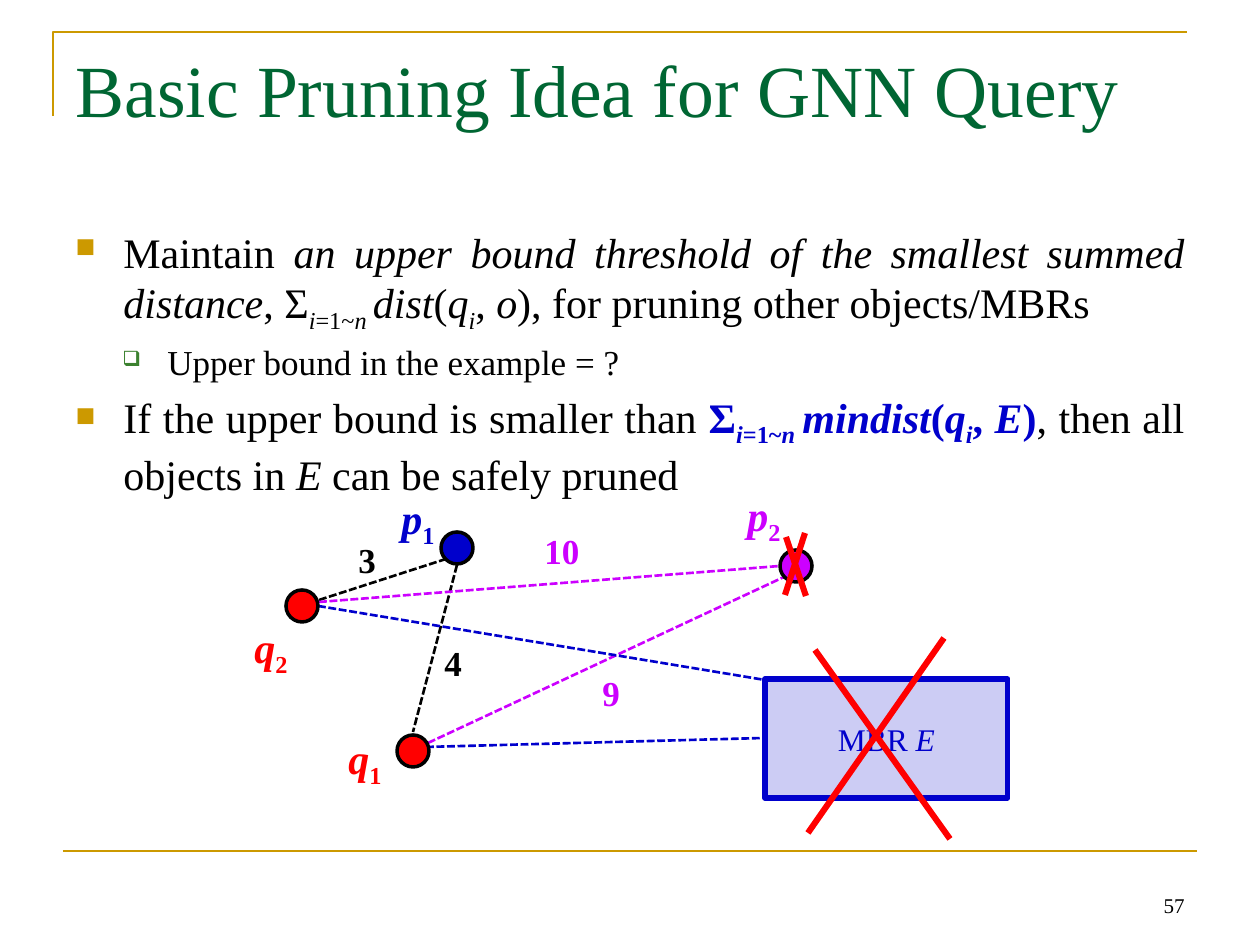
"""Build the slide on the basic pruning idea for GNN queries."""
from lxml import etree
from pptx import Presentation, util as u
from pptx.dml.color import RGBColor
from pptx.enum import dml, shapes, text
from pptx.oxml.ns import qn

PX = 914400 // 126
FONT = "Times New Roman"
BLACK = RGBColor(0x00, 0x00, 0x00)
BLUE = RGBColor(0x00, 0x00, 0xCC)
RED = RGBColor(0xFF, 0x00, 0x00)
VIOLET = RGBColor(0xCC, 0x00, 0xFF)
GOLD = RGBColor(0xCC, 0x99, 0x00)
GREEN = RGBColor(0x00, 0x66, 0x33)
LEAF = RGBColor(0x3B, 0x81, 0x2F)

TITLE = "Basic Pruning Idea for GNN Query"
# Style letters: i italic, s subscript, b bold blue
SUM = [("i", "is"), ("=1~", "s"), ("n ", "is")]
DIST_ARGS = [("(", ""), ("q", "i"), ("i", "is"), (", ", "")]
BOUND = [("Σ", "")] + SUM + [("mindist", "i")] + DIST_ARGS + [("E", "i"), (")", "")]
BODY = [
    (0, [("Maintain ", ""),
         ("an upper bound threshold of the smallest summed distance", "i"),
         (", Σ", "")] + SUM + [("dist", "i")] + DIST_ARGS
        + [("o", "i"), ("), for pruning other objects/MBRs", "")]),
    (1, [("Upper bound in the example = ?", "")]),
    (0, [("If the upper bound is smaller than ", "")]
        + [(words, style + "b") for words, style in BOUND]
        + [(", then all objects in ", ""), ("E ", "i"), ("can be safely pruned", "")]),
]
LEVELS = [
    dict(size=24, left=48, hang=48, mark="■", color=GOLD, pct=65),
    dict(size=20, left=92, hang=45, mark="❑", color=LEAF, pct=60),
]
POINTS = [
    ("p", "1", BLUE, (441, 532), (389, 486)),
    ("p", "2", VIOLET, (780, 550), (735, 483)),
    ("q", "1", RED, (397, 735), (336, 726)),
    ("q", "2", RED, (286, 590), (242, 615)),
]
DISTANCES = [
    ("3", BLACK, (346, 532, 43)),
    ("4", BLACK, (432, 635, 43)),
    ("10", VIOLET, (532, 523, 60)),
    ("9", VIOLET, (590, 665, 43)),
]
DASHES = [
    (BLACK, (319, 600, 446, 559)),
    (BLACK, (457, 565, 413, 732)),
    (VIOLET, (319, 602, 780, 566)),
    (VIOLET, (428, 743, 784, 577)),
    (BLUE, (318, 606, 765, 680)),
    (BLUE, (426, 747, 765, 738)),
]
CROSSES = [
    (805, 533, 785, 595), (786, 537, 806, 596),
    (944, 638, 808, 833), (815, 650, 950, 839),
]


def px(*values):
    return [v * PX for v in values]


def add_run(p, words, size, color, style=""):
    r = p.add_run()
    r.text = words
    f = r.font
    f.name, f.size = FONT, u.Pt(size)
    f.color.rgb = color
    f.bold, f.italic = "b" in style, "i" in style
    if "s" in style:
        r._r.get_or_add_rPr().set("baseline", "-25000")


def add_box(s, box, wrap=True):
    tf = s.shapes.add_textbox(*px(*box)).text_frame
    tf.word_wrap = wrap
    return tf


def add_line(s, ends, color, width, dash=None):
    c = s.shapes.add_connector(shapes.MSO_CONNECTOR.STRAIGHT, *px(*ends))
    c.line.color.rgb, c.line.width = color, u.Pt(width)
    if dash:
        c.line.dash_style = dash
    etree.SubElement(c._element.spPr, qn("a:effectLst"))


def add_shape(s, kind, box, fill, line, width):
    sp = s.shapes.add_shape(kind, *px(*box))
    sp.shadow.inherit = False
    sp.fill.solid()
    sp.fill.fore_color.rgb = fill
    sp.line.color.rgb, sp.line.width = line, u.Pt(width)
    return sp


def set_bullet(p, level):
    pPr = p._p.get_or_add_pPr()
    pPr.set("marL", str(level["left"] * PX))
    pPr.set("indent", str(-level["hang"] * PX))
    clr = etree.SubElement(pPr, qn("a:buClr"))
    etree.SubElement(clr, qn("a:srgbClr"), val=str(level["color"]))
    etree.SubElement(pPr, qn("a:buSzPct"), val=str(level["pct"] * 1000))
    etree.SubElement(pPr, qn("a:buChar"), char=level["mark"])


def add_frame(s):
    fb = s.shapes.build_freeform(*px(53, 116), scale=1.0)
    fb.add_line_segments([px(53, 32), px(1187, 32)], close=False)
    sp = fb.convert_to_shape()
    sp.shadow.inherit = False
    sp.fill.background()
    sp.line.color.rgb, sp.line.width = GOLD, u.Pt(1.5)
    add_line(s, (63, 851, 1197, 851), GOLD, 1.5)


def add_title(s):
    sp = s.shapes.title
    sp.left, sp.top, sp.width, sp.height = px(63, 38, 1134, 157)
    tf = sp.text_frame
    tf.auto_size = text.MSO_AUTO_SIZE.NONE
    tf.vertical_anchor = text.MSO_ANCHOR.TOP
    p = tf.paragraphs[0]
    p.alignment = text.PP_ALIGN.LEFT
    add_run(p, TITLE, 42, GREEN)


def add_body(s):
    tf = add_box(s, (63, 220, 1134, 624))
    for n, (depth, runs) in enumerate(BODY):
        p = tf.add_paragraph() if n else tf.paragraphs[0]
        level = LEVELS[depth]
        p.level, p.alignment = depth, text.PP_ALIGN.JUSTIFY
        p.space_before = u.Pt(level["size"] * 0.2)
        set_bullet(p, level)
        for words, style in runs:
            add_run(p, words, level["size"], BLUE if "b" in style else BLACK, style)


def add_diagram(s):
    for color, ends in DASHES:
        add_line(s, ends, color, 1.5, dml.MSO_LINE.SQUARE_DOT)
    for letter, index, color, dot, label in POINTS:
        add_shape(s, shapes.MSO_SHAPE.OVAL, (*dot, 32, 32), color, BLACK, 2)
        p = add_box(s, (*label, 60, 63), wrap=False).paragraphs[0]
        add_run(p, letter, 24, color, "bi")
        add_run(p, index, 24, color, "bs")
    for value, color, (x, y, w) in DISTANCES:
        p = add_box(s, (x, y, w, 55), wrap=False).paragraphs[0]
        add_run(p, value, 20, color, "b")
    sp = add_shape(s, shapes.MSO_SHAPE.RECTANGLE, (765, 679, 243, 119), BLUE, BLUE, 3)
    fill = sp._element.spPr.find(qn("a:solidFill"))
    etree.SubElement(fill[0], qn("a:alpha"), val="20000")
    sp.text_frame.vertical_anchor = text.MSO_ANCHOR.MIDDLE
    p = sp.text_frame.paragraphs[0]
    p.alignment = text.PP_ALIGN.CENTER
    add_run(p, "MBR ", 18, BLUE)
    add_run(p, "E", 18, BLUE, "i")
    for ends in CROSSES:
        add_line(s, ends, RED, 3.5)


def add_number(s):
    tf = add_box(s, (903, 861, 294, 63))
    tf.vertical_anchor = text.MSO_ANCHOR.BOTTOM
    p = tf.paragraphs[0]
    p.alignment = text.PP_ALIGN.RIGHT
    add_run(p, "57", 12, BLACK)


def main():
    prs = Presentation()
    prs.slide_width, prs.slide_height = px(1260, 945)
    s = prs.slides.add_slide(prs.slide_layouts[5])
    for add_part in (add_frame, add_title, add_body, add_diagram, add_number):
        add_part(s)
    prs.save("out.pptx")


if __name__ == "__main__":
    main()
